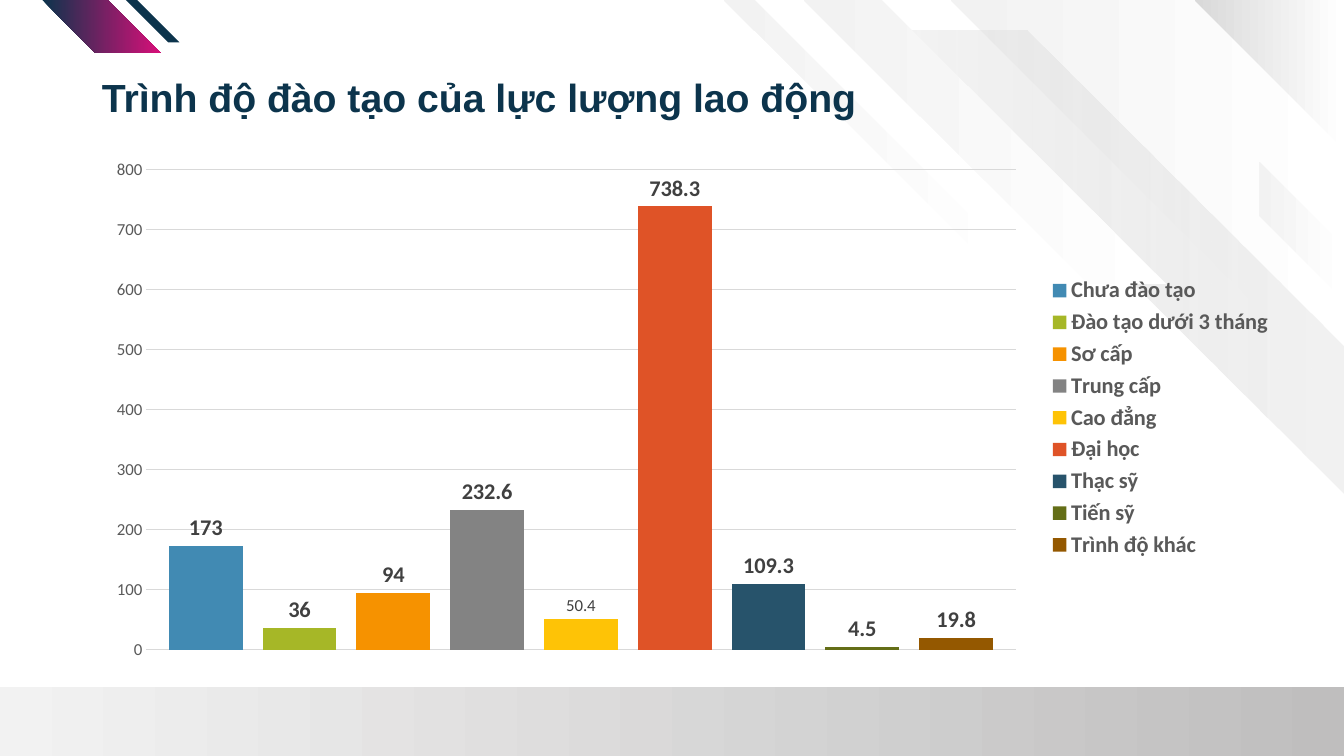
from dataclasses import dataclass

from lxml import etree
from pptx import Presentation
from pptx.chart.data import CategoryChartData
from pptx.dml.color import RGBColor
from pptx.enum.chart import (XL_CHART_TYPE, XL_LABEL_POSITION,
                             XL_LEGEND_POSITION, XL_TICK_MARK)
from pptx.enum.shapes import MSO_SHAPE
from pptx.oxml import parse_xml
from pptx.oxml.ns import nsdecls, qn
from pptx.util import Inches, Pt

COLUMNS = XL_CHART_TYPE.COLUMN_CLUSTERED
LABEL_ABOVE = XL_LABEL_POSITION.OUTSIDE_END
LEGEND_RIGHT = XL_LEGEND_POSITION.RIGHT
NO_TICKS = XL_TICK_MARK.NONE
RECTANGLE = MSO_SHAPE.RECTANGLE

COLORS = {
    "white": "FFFFFF", "pale": "F2F2F2", "light": "D9D9D9", "silver": "BFBEBE",
    "navy": "0C344C", "pink": "D80F79", "axis": "595959", "label": "404040",
    "blue": "418AB3", "green": "A6B727", "orange": "F69200", "gray": "838383",
    "yellow": "FEC306", "red": "DF5327", "teal": "27536B", "olive": "646E17",
    "brown": "945800",
}
BIG = {"size": Pt(16), "bold": True, "name": "Calibri"}
SMALL = {"size": Pt(12), "bold": False, "name": "Calibri"}
TITLE = {"size": Pt(28), "bold": True, "name": "Arial"}
PLOT = {"x": 0.049, "y": 0.051, "w": 0.727, "h": 0.868}


@dataclass
class Band:
    points: list[tuple[float, float]]
    colors: tuple[str, ...]
    angle: int = 180
    end_alpha: int = 100


@dataclass
class Level:
    name: str
    value: float
    color: str
    font: dict


BANDS = [
    Band([(13.33, 0), (9.43, 0), (13.33, 3.9)], ("white", "pale")),
    Band([(13.33, 3.44), (10.19, 0.3), (8.71, 0.3), (13.33, 4.91)],
         ("pale", "light"), end_alpha=26),
    Band([(13.33, 2.45), (12.49, 1.61), (12.49, 2.14), (13.33, 2.98)],
         ("white", "pale")),
    Band([(11.57, 2.82), (8.74, 0), (7.97, 0), (10.8, 2.82)], ("white", "pale")),
    Band([(13.33, 0), (11.85, 0), (13.33, 1.48)], ("white", "light")),
    Band([(7.48, 0), (10.01, 2.53), (10.01, 2.82), (7.18, 0)], ("white", "pale")),
    Band([(0.42, 0), (0.95, 0.53), (1.6, 0.53), (1.07, 0)], ("navy", "pink"), 0),
    Band([(1.25, 0), (1.67, 0.42), (1.78, 0.42), (1.36, 0)], ("navy",)),
]
LEVELS = [
    Level("Chưa đào tạo", 173, "blue", BIG),
    Level("Đào tạo dưới 3 tháng", 36, "green", BIG),
    Level("Sơ cấp", 94, "orange", BIG),
    Level("Trung cấp", 232.6, "gray", BIG),
    Level("Cao đẳng", 50.4, "yellow", SMALL),
    Level("Đại học", 738.3, "red", BIG),
    Level("Thạc sỹ", 109.3, "teal", BIG),
    Level("Tiến sỹ", 4.5, "olive", BIG),
    Level("Trình độ khác", 19.8, "brown", BIG),
]


def rgb(color: str) -> RGBColor:
    return RGBColor.from_string(COLORS[color])


def set_attrs(target, values: dict) -> None:
    for key, value in values.items():
        setattr(target, key, value)


def set_font(font, values: dict, color: str) -> None:
    set_attrs(font, values)
    font.color.rgb = rgb(color)


def paint(sp, colors: tuple[str, ...], angle: int, end_alpha: int = 100) -> None:
    sp.shadow.inherit = False
    sp.line.fill.background()
    if len(colors) == 1:
        sp.fill.solid()
        sp.fill.fore_color.rgb = rgb(colors[0])
        return
    sp.fill.gradient()
    sp.fill.gradient_angle = angle
    for stop, color in zip(sp.fill.gradient_stops, colors):
        stop.color.rgb = rgb(color)
    if end_alpha < 100:
        end = sp._element.spPr.findall(".//" + qn("a:srgbClr"))[-1]
        etree.SubElement(end, qn("a:alpha"), val=str(end_alpha * 1000))


def add_band(slide, band: Band) -> None:
    start, *rest = [(Inches(x), Inches(y)) for x, y in band.points]
    builder = slide.shapes.build_freeform(*start)
    builder.add_line_segments(rest, close=True)
    paint(builder.convert_to_shape(), band.colors, band.angle, band.end_alpha)


def add_title(slide, text: str) -> None:
    tf = slide.shapes.add_textbox(Inches(1.01), Inches(0.73),
                                  Inches(11.71), Inches(0.47)).text_frame
    set_attrs(tf, {"word_wrap": True, "margin_left": 0, "margin_right": 0,
                   "margin_top": 0, "margin_bottom": 0})
    r = tf.paragraphs[0].add_run()
    r.text = text
    set_font(r.font, TITLE, "navy")


def set_plot_layout(chart) -> None:
    sides = "".join(f'<c:{k}Mode val="edge"/>' for k in "xy")
    sides += "".join(f'<c:{k} val="{v}"/>' for k, v in PLOT.items())
    layout = parse_xml(f'<c:layout {nsdecls("c")}><c:manualLayout>'
                       f'<c:layoutTarget val="inner"/>{sides}'
                       '</c:manualLayout></c:layout>')
    area = chart._chartSpace.chart.plotArea
    for old in area.findall(qn("c:layout")):
        area.remove(old)
    area.insert(0, layout)


def add_level_chart(slide, levels: list[Level]) -> None:
    data = CategoryChartData()
    data.categories = ["1"]
    for level in levels:
        data.add_series(level.name, [level.value])
    chart = slide.shapes.add_chart(COLUMNS, Inches(0.87), Inches(1.4),
                                   Inches(11.86), Inches(5.49), data).chart
    set_attrs(chart, {"has_title": False, "has_legend": True})
    set_attrs(chart.font, SMALL)
    set_plot_layout(chart)

    # Axes and legend
    chart.category_axis.visible = False
    axis = chart.value_axis
    set_attrs(axis, {"minimum_scale": 0, "maximum_scale": 800, "major_unit": 100,
                     "major_tick_mark": NO_TICKS, "minor_tick_mark": NO_TICKS})
    axis.format.line.fill.background()
    set_font(axis.tick_labels.font, SMALL, "axis")
    grid = axis.major_gridlines.format.line
    grid.width = Pt(0.75)
    grid.color.rgb = rgb("light")
    set_attrs(chart.legend, {"position": LEGEND_RIGHT, "include_in_layout": False})
    set_font(chart.legend.font, BIG, "axis")

    # Columns and their labels
    plot = chart.plots[0]
    set_attrs(plot, {"gap_width": 61, "overlap": -27, "vary_by_categories": False})
    for series, level in zip(plot.series, levels):
        series.format.fill.solid()
        series.format.fill.fore_color.rgb = rgb(level.color)
        series.invert_if_negative = False
        labels = series.data_labels
        set_attrs(labels, {"show_value": True, "position": LABEL_ABOVE})
        set_font(labels.font, level.font, "label")


def main() -> None:
    prs = Presentation()
    prs.slide_width, prs.slide_height = Inches(13.33), Inches(7.5)
    slide = prs.slides.add_slide(prs.slide_layouts[6])

    # Background decoration
    footer = slide.shapes.add_shape(RECTANGLE, 0, Inches(6.82),
                                    Inches(13.33), Inches(0.68))
    paint(footer, ("silver", "pale"), 180)
    for band in BANDS:
        add_band(slide, band)

    # Content
    add_title(slide, "Trình độ đào tạo của lực lượng lao động")
    add_level_chart(slide, LEVELS)
    prs.save("out.pptx")


if __name__ == "__main__":
    main()
